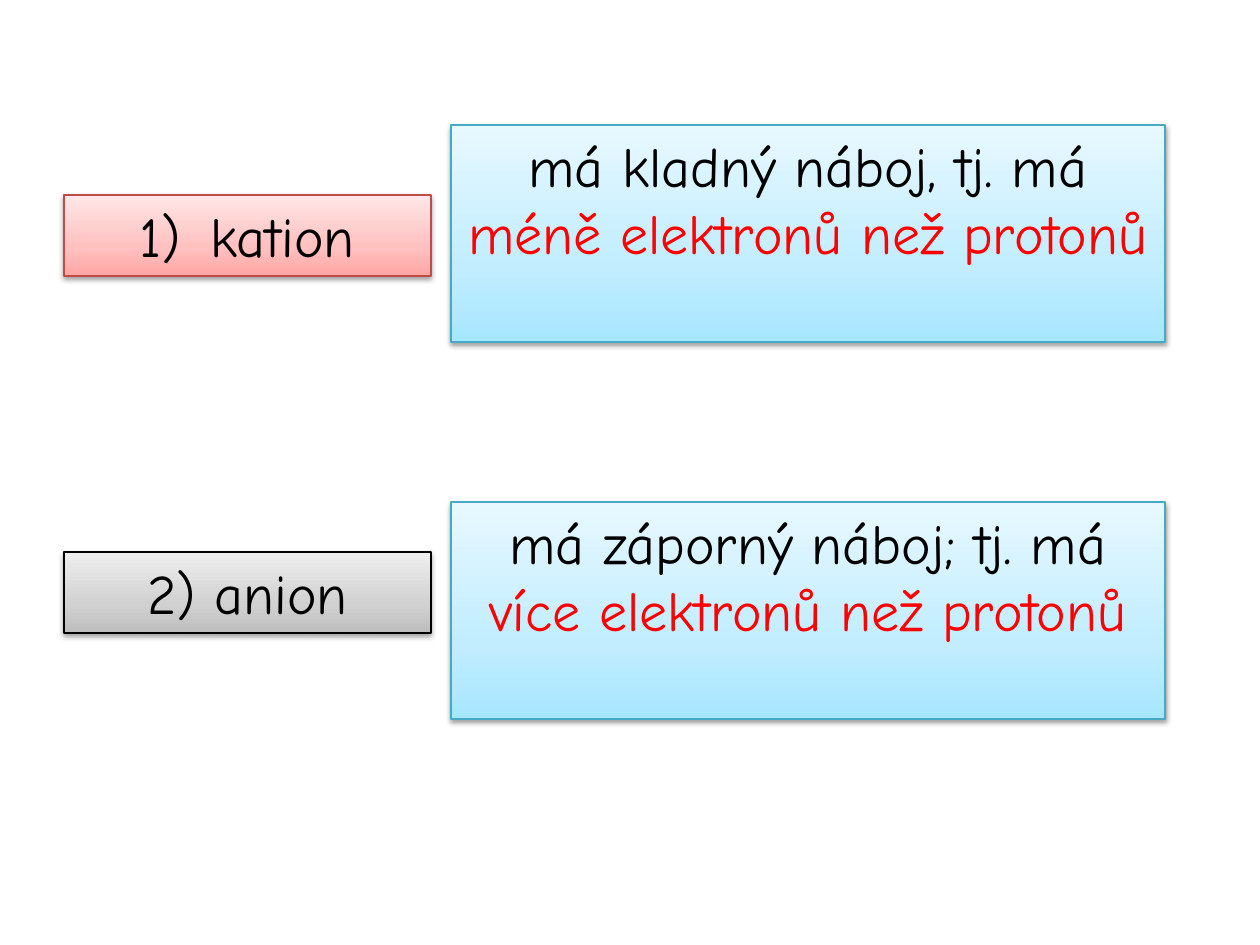
import pptx
import pptx.util
import pptx.dml.color
import pptx.enum.shapes
import pptx.enum.text
import pptx.oxml
import pptx.oxml.ns

PIXEL = 914400 / 126
COLORS = {"black": "000000", "red": "FF0000", "cyan_line": "46AAC5", "red_line": "BF4C48"}
GRADIENTS = {
    "red": ("FFA6A5", "FFC0BF", "FFE7E7"),
    "gray": ("BDBDBD", "D1D1D1", "EEEEEE"),
    "cyan": ("A7E6FF", "C1EDFF", "E7F8FF"),
}
STOPS = (0, 35, 100)
NAMESPACE = pptx.oxml.ns.nsdecls("a")


def px(value):
    return pptx.util.Emu(round(value * PIXEL))


def rgb(name):
    return pptx.dml.color.RGBColor.from_string(COLORS[name])


class IonSlide:
    font_format = {"name": "Comic Neue", "size": pptx.util.Pt(32)}
    frame_format = {
        "word_wrap": True,
        "auto_size": pptx.enum.text.MSO_AUTO_SIZE.NONE,
        "vertical_anchor": pptx.enum.text.MSO_ANCHOR.TOP,
    }

    def __init__(self, presentation):
        self.slide = presentation.slides.add_slide(presentation.slide_layouts[6])

    def box(self, left, top, width, height, gradient, line, runs):
        shape = self.slide.shapes.add_shape(
            pptx.enum.shapes.MSO_SHAPE.RECTANGLE, px(left), px(top), px(width), px(height))
        self.gradient(shape, GRADIENTS[gradient])
        shape.line.color.rgb = rgb(line)
        shape.line.width = pptx.util.Pt(0.75)
        self.shadow(shape)
        for key, value in self.frame_format.items():
            setattr(shape.text_frame, key, value)
        paragraph = shape.text_frame.paragraphs[0]
        paragraph.alignment = pptx.enum.text.PP_ALIGN.CENTER
        for text, color in runs:
            run = paragraph.add_run()
            run.text = text
            for key, value in self.font_format.items():
                setattr(run.font, key, value)
            run.font.color.rgb = rgb(color)
        return paragraph

    def gradient(self, shape, colors):
        shape.fill.gradient()
        shape.fill.gradient_angle = 90
        stop_list = shape._element.spPr.find(".//" + pptx.oxml.ns.qn("a:gsLst"))
        for stop in list(stop_list):
            stop_list.remove(stop)
        for position, color in zip(STOPS, colors):
            stop_list.append(pptx.oxml.parse_xml(
                f'<a:gs {NAMESPACE} pos="{position * 1000}"><a:srgbClr val="{color}"/></a:gs>'))

    def shadow(self, shape):
        shape.shadow.inherit = False
        blur, distance = pptx.util.Pt(3.1), pptx.util.Pt(1.6)
        effects = shape._element.spPr.find(pptx.oxml.ns.qn("a:effectLst"))
        effects.append(pptx.oxml.parse_xml(
            f'<a:outerShdw {NAMESPACE} blurRad="{blur}" dist="{distance}" dir="5400000" '
            f'rotWithShape="0"><a:srgbClr val="{COLORS["black"]}"><a:alpha val="38000"/>'
            '</a:srgbClr></a:outerShdw>'))

    def number(self, paragraph):
        properties = paragraph._p.get_or_add_pPr()
        indent = px(71)
        properties.set("marL", str(indent))
        properties.set("indent", str(-indent))
        properties.append(pptx.oxml.parse_xml(
            f'<a:buFont {NAMESPACE} typeface="+mj-lt"/>'))
        properties.append(pptx.oxml.parse_xml(
            f'<a:buAutoNum {NAMESPACE} type="arabicParenR"/>'))

    def ion(self, top, text, gradient, line):
        return self.box(64, top, 367, 81, gradient, line, [(text, "black")])

    def description(self, top, charge, balance):
        self.box(451, top, 714, 217, "cyan", "cyan_line",
                 [(charge, "black"), (balance, "red")])


def main():
    presentation = pptx.Presentation()
    presentation.slide_width = px(1260)
    presentation.slide_height = px(945)
    slide = IonSlide(presentation)
    cation = slide.ion(195, "kation", "red", "red_line")
    slide.number(cation)
    slide.ion(552, "2) anion", "gray", "black")
    slide.description(125, "má kladný náboj, tj. má ", "méně elektronů než protonů")
    slide.description(502, "má záporný náboj; tj. má ", "více elektronů než protonů")
    presentation.save("out.pptx")


if __name__ == "__main__":
    main()
